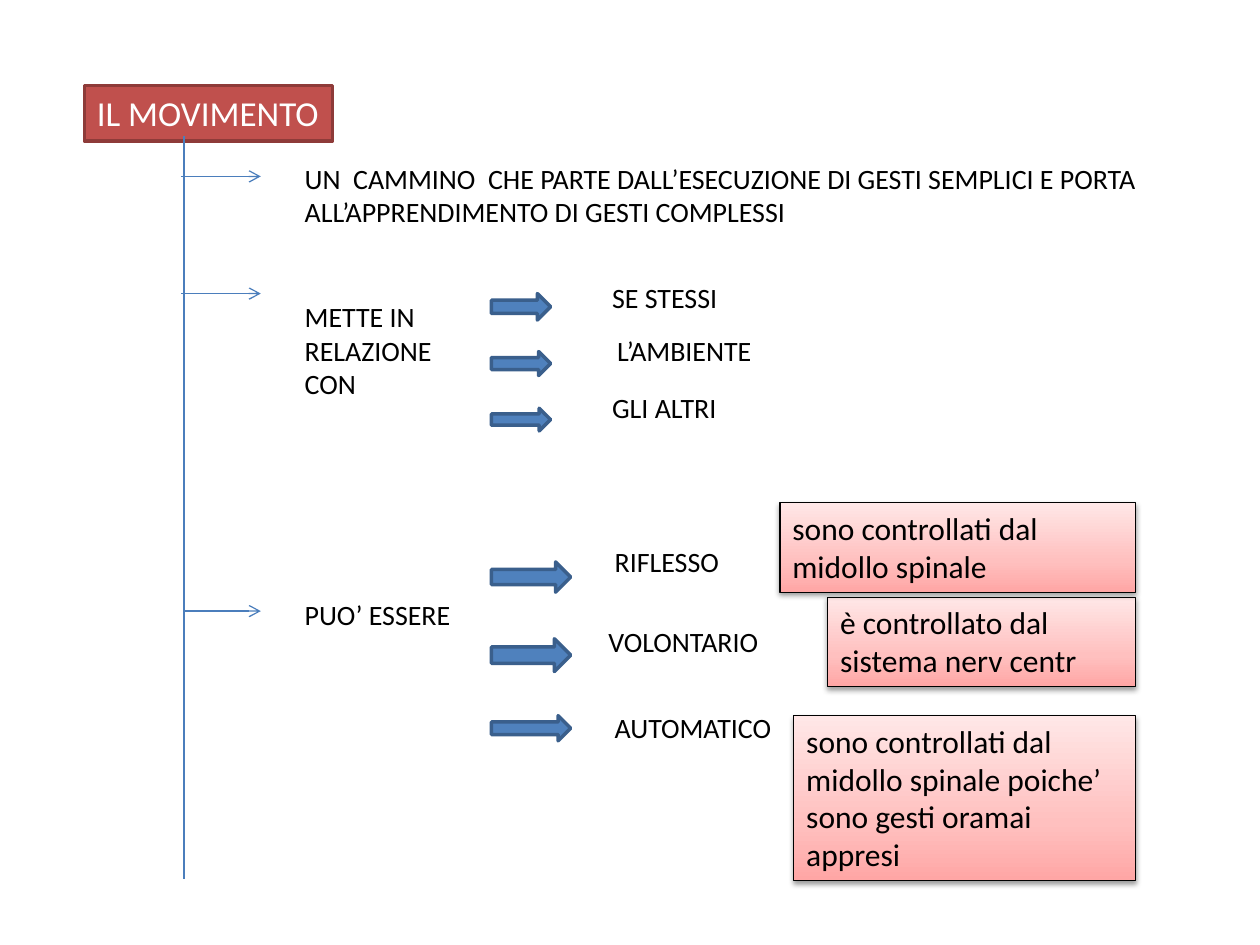
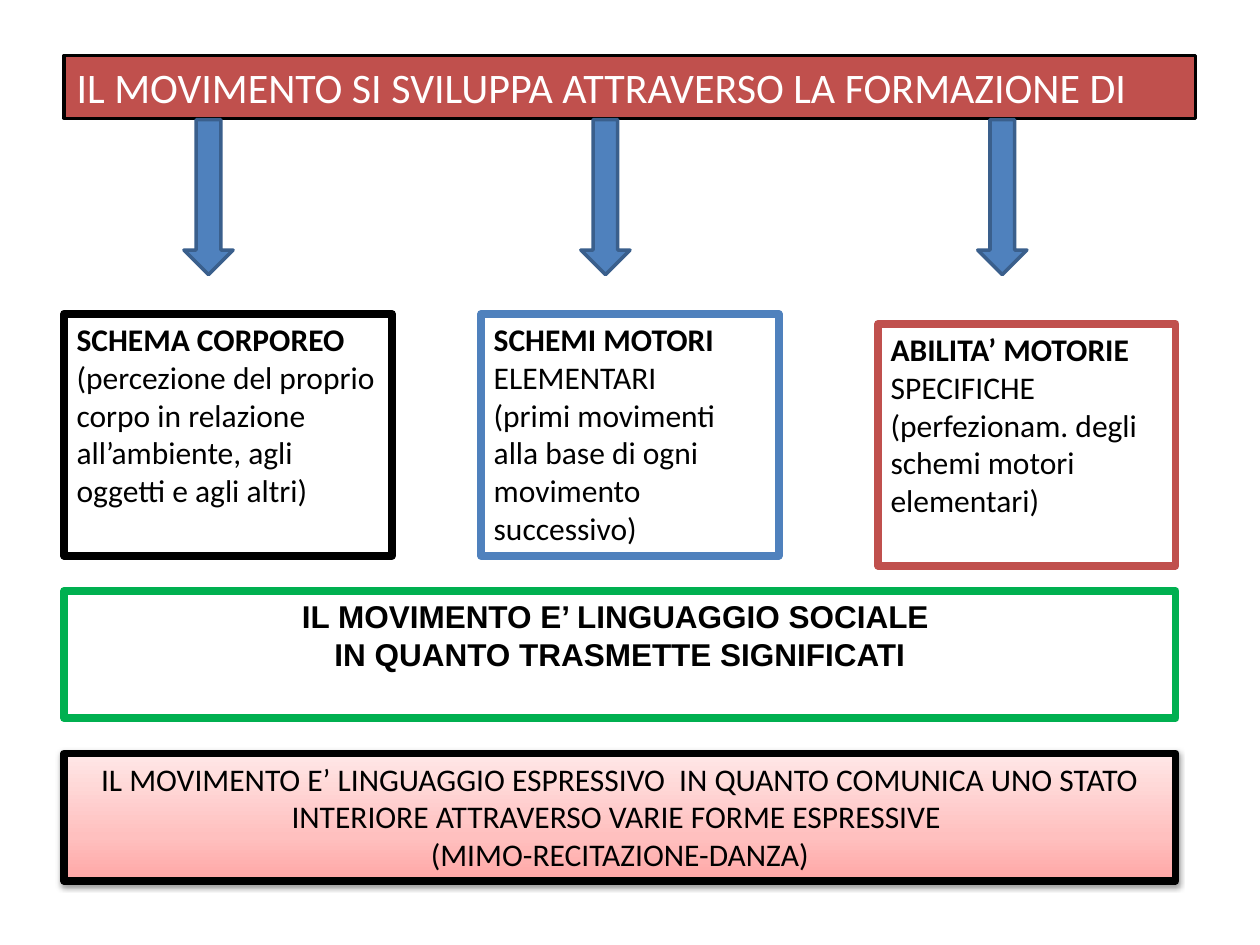
import pptx
import pptx.dml.color
import pptx.enum.shapes
import pptx.enum.text
import pptx.oxml
import pptx.oxml.ns
import pptx.util
from lxml import etree

# Grid: 100 columns by 75 rows, square cells
COLUMNS, ROWS = 100, 75
CELL = pptx.util.Inches(10) // COLUMNS

# Shared look
RED, DARK_RED = "C0504D", "8E3B39"
BLUE, DARK_BLUE, LINE_BLUE = "4F81BD", "3A5F8C", "4B7EBC"
GREEN, BLACK, WHITE = "00B050", "000000", "FFFFFF"
PINK_STOPS = ((0, "FFA6A5"), (35, "FFC0BF"), (100, "FFE7E7"))
PINK = "pink gradient"

SHAPE = pptx.enum.shapes.MSO_SHAPE
LEFT = pptx.enum.text.PP_ALIGN.LEFT
CENTER = pptx.enum.text.PP_ALIGN.CENTER


def color(hex_string):
    return pptx.dml.color.RGBColor.from_string(hex_string)


def cells(*lengths):
    return [round(length * CELL) for length in lengths]


def add_element(parent, tag, **attributes):
    return etree.SubElement(parent, pptx.oxml.ns.qn(tag),
                            {name: str(value) for name, value in attributes.items()})


class Deck:
    """Holds the presentation, its style and the current slide."""

    def __init__(self):
        self.presentation = pptx.Presentation()
        self.presentation.slide_width = COLUMNS * CELL
        self.presentation.slide_height = ROWS * CELL
        self.slide = None

    def new_slide(self):
        self.slide = self.presentation.slides.add_slide(self.presentation.slide_layouts[6])

    def set_text(self, shape, paragraphs, size, ink=BLACK, font="Calibri",
                 bold=False, align=LEFT, wrap=True):
        """Each paragraph is a string, or a pair of bold and plain text."""
        frame = shape.text_frame
        frame.word_wrap = wrap
        frame.vertical_anchor = pptx.enum.text.MSO_ANCHOR.TOP
        for index, content in enumerate(paragraphs):
            paragraph = frame.add_paragraph() if index else frame.paragraphs[0]
            paragraph.alignment = align
            paragraph.font.name = font
            paragraph.font.size = pptx.util.Pt(size)
            paragraph.font.color.rgb = color(ink)
            if isinstance(content, str):
                paragraph.font.bold = bold
                paragraph.add_run().text = content
            else:
                for text, heavy in zip(content, (True, False)):
                    run = paragraph.add_run()
                    run.text = text
                    run.font.bold = heavy

    def text(self, left, top, width, height, content):
        label = self.slide.shapes.add_textbox(*cells(left, top, width, height))
        self.set_text(label, [content], 16)

    def shape(self, kind, left, top, width, height, fill, outline, weight):
        shape = self.slide.shapes.add_shape(kind, *cells(left, top, width, height))
        shape.shadow.inherit = False
        shape.line.color.rgb = color(outline)
        shape.line.width = pptx.util.Pt(weight)
        if fill == PINK:
            self.paint_pink(shape)
        else:
            shape.fill.solid()
            shape.fill.fore_color.rgb = color(fill)
        return shape

    def paint_pink(self, shape):
        """Gradient rising from dark to light, with a soft shadow below."""
        shape.fill.gradient()
        shape.fill.gradient_angle = 90
        properties = shape.element.spPr
        stops = properties.find(".//" + pptx.oxml.ns.qn("a:gsLst"))
        stops.clear()
        for position, tint in PINK_STOPS:
            stop = add_element(stops, "a:gs", pos=position * 1000)
            add_element(stop, "a:srgbClr", val=tint)
        effects = properties.find(pptx.oxml.ns.qn("a:effectLst"))
        shadow = add_element(effects, "a:outerShdw", blurRad=pptx.util.Pt(3.1),
                             dist=pptx.util.Pt(1.6), dir=90 * 60000, rotWithShape=0)
        shade = add_element(shadow, "a:srgbClr", val=BLACK)
        add_element(shade, "a:alpha", val=38000)

    def box(self, left, top, width, height, paragraphs, fill=WHITE,
            outline=BLACK, weight=4.5, size=18, **style):
        box = self.shape(SHAPE.RECTANGLE, left, top, width, height, fill, outline, weight)
        self.set_text(box, paragraphs, size, **style)

    def arrow(self, kind, left, top, width, height):
        self.shape(kind, left, top, width, height, BLUE, DARK_BLUE, 2)

    def line(self, start_x, start_y, end_x, end_y, pointed=False):
        connector = self.slide.shapes.add_connector(
            pptx.enum.shapes.MSO_CONNECTOR.STRAIGHT, *cells(start_x, start_y, end_x, end_y))
        connector.line.color.rgb = color(LINE_BLUE)
        connector.line.width = pptx.util.Pt(0.75)
        properties = connector.element.spPr
        if pointed:
            add_element(properties.find(pptx.oxml.ns.qn("a:ln")), "a:tailEnd", type="arrow")
        add_element(properties, "a:effectLst")


def build_movement_map(deck):
    deck.new_slide()

    # Title and trunk with its branches
    deck.box(6.7, 6.8, 19.7, 4.4, ["IL MOVIMENTO"], RED, DARK_RED, 2, 20,
             ink=WHITE, wrap=False)
    trunk = 14.6
    deck.line(trunk, 10.8, trunk, 69.8)
    for start, row in ((14.4, 14), (14.4, 23.3), (trunk, 48.5)):
        deck.line(start, row, 20.7, row, pointed=True)

    # Branch labels
    for top, width, height, label in (
            (12.3, 69.3, 6.4, "UN  CAMMINO  CHE PARTE DALL’ESECUZIONE DI GESTI SEMPLICI "
                              "E PORTA ALL’APPRENDIMENTO DI GESTI COMPLESSI"),
            (23.3, 14.2, 9.1, "METTE IN RELAZIONE CON"),
            (46.9, 15.7, 3.7, "PUO’ ESSERE")):
        deck.text(23.2, top, width, height, label)

    # Arrows: top, width, height; labels: left, top
    for arrow_top, width, height, left, top, label in (
            (23.3, 4.7, 2.1, 47.6, 21.8, "SE STESSI"),
            (27.9, 4.7, 1.9, 48, 26, "L’AMBIENTE"),
            (32.4, 4.7, 1.8, 47.6, 30.5, "GLI ALTRI"),
            (44.6, 6.3, 2.4, 47.8, 42.7, "RIFLESSO"),
            (50.7, 6.3, 2.6, 47.3, 49.1, "VOLONTARIO"),
            (56.8, 6.3, 2, 47.8, 55.9, "AUTOMATICO")):
        deck.arrow(SHAPE.RIGHT_ARROW, 39, arrow_top, width, height)
        deck.text(left, top, 16.5, 3.7, label)

    # Control notes, aligned on their right edge
    right = 90.1
    for left, top, height, note in (
            (65.7, 47.4, 7.1, "è controllato dal sistema nerv centr"),
            (61.9, 39.9, 7.1, "sono controllati dal midollo spinale"),
            (63, 56.8, 13.1, "sono controllati dal midollo spinale poiche’ "
                             "sono gesti oramai appresi")):
        deck.box(left, top, right - left, height, [note], PINK, weight=0.75)


def build_development(deck):
    deck.new_slide()
    margin, full_width = 5.1, 88.2

    # Title band and arrows
    deck.box(margin, 4.4, 89.8, 5,
             ["IL MOVIMENTO SI SVILUPPA ATTRAVERSO LA FORMAZIONE DI"],
             RED, weight=2, size=24, ink=WHITE)
    for index in range(3):
        deck.arrow(SHAPE.DOWN_ARROW, 14.6 + 31.5 * index, 9.5, 3.9, 12.3)

    # Three components
    for left, top, width, outline, heading, detail in (
            (margin, 24.9, 26, BLACK, ("SCHEMA CORPOREO",),
             "(percezione del proprio corpo in relazione all’ambiente, agli oggetti e agli altri)"),
            (38.2, 24.9, 23.6, BLUE, ("SCHEMI MOTORI ", "ELEMENTARI"),
             "(primi movimenti alla base di ogni movimento successivo)"),
            (69.7, 25.7, 23.6, RED, ("ABILITA’ MOTORIE ", "SPECIFICHE"),
             "(perfezionam. degli schemi motori elementari)")):
        deck.box(left, top, width, 19.2, [heading, detail], outline=outline)

    # Two languages of movement
    deck.box(margin, 46.9, full_width, 10.1,
             ["IL MOVIMENTO E’ LINGUAGGIO SOCIALE ", "IN QUANTO TRASMETTE SIGNIFICATI"],
             outline=GREEN, font="Arial", bold=True, align=CENTER)
    deck.box(margin, 59.8, full_width, 10.1,
             ["IL MOVIMENTO E’ LINGUAGGIO ESPRESSIVO  IN QUANTO COMUNICA UNO STATO "
              "INTERIORE ATTRAVERSO VARIE FORME ESPRESSIVE ",
              "(MIMO-RECITAZIONE-DANZA)"], PINK, align=CENTER)


def main():
    deck = Deck()
    build_movement_map(deck)
    build_development(deck)
    deck.presentation.save("out.pptx")


if __name__ == "__main__":
    main()
